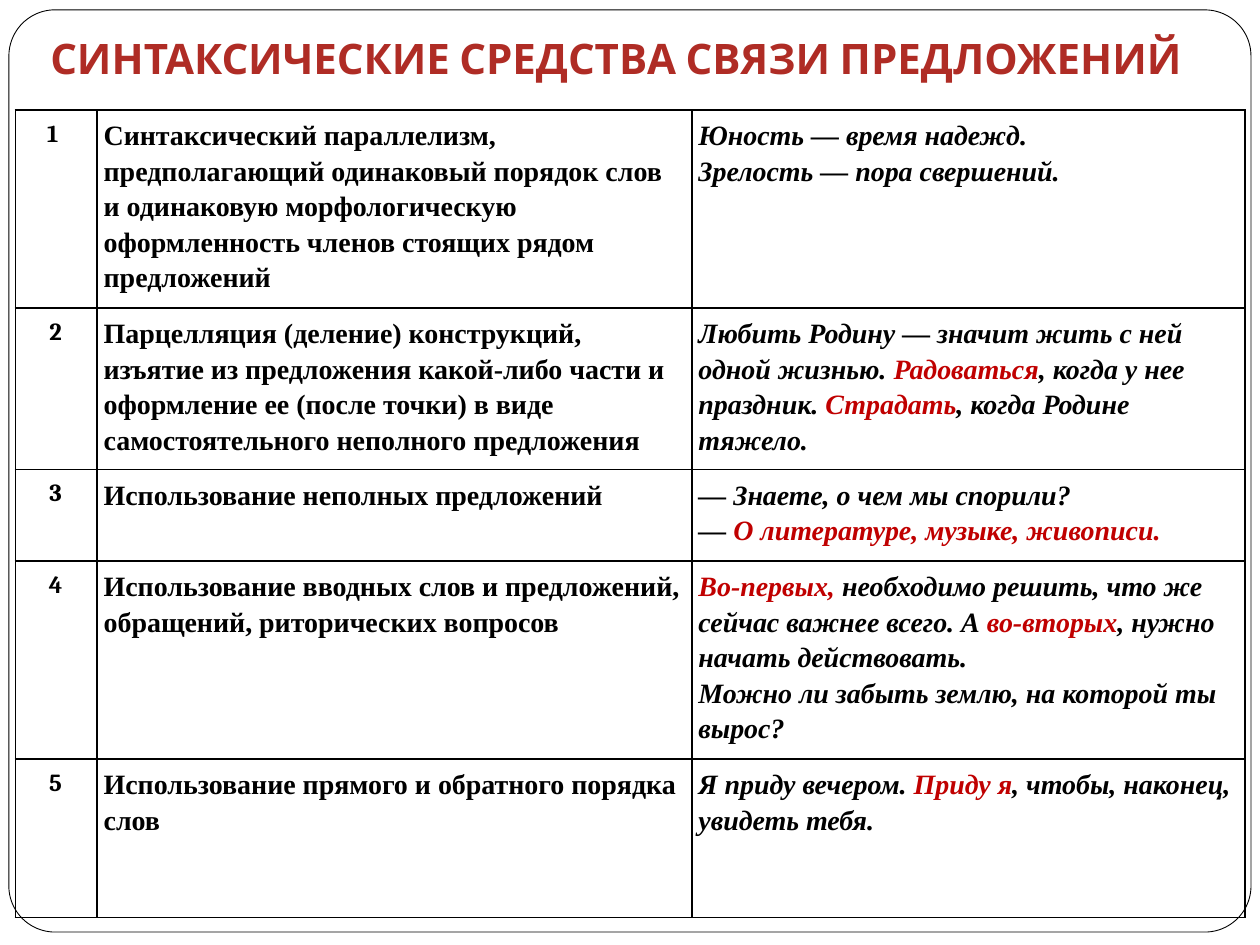
import lxml.etree
import pptx
import pptx.dml.color
import pptx.enum.shapes
import pptx.enum.text
import pptx.oxml.ns
import pptx.util

Cm = pptx.util.Cm
Pt = pptx.util.Pt
CENTER = pptx.enum.text.PP_ALIGN.CENTER
LEFT = pptx.enum.text.PP_ALIGN.LEFT

BLACK = "000000"
WHITE = "FFFFFF"
ACCENT = "C00000"
TITLE_RED = "AF2C25"

TITLE = "СИНТАКСИЧЕСКИЕ СРЕДСТВА СВЯЗИ ПРЕДЛОЖЕНИЙ"
COLUMN_WIDTHS = [1.65, 11.99, 11.15]
ROW_HEIGHTS = [3.99, 3.25, 1.85, 3.99, 3.2]
ACCENT_MARK = "*"
ROWS = [
    ("1 ",
     "Синтаксический параллелизм, предполагающий одинаковый порядок слов "
     "и одинаковую морфологическую оформленность членов стоящих рядом предложений",
     ["Юность — время надежд.", "Зрелость — пора свершений."]),
    ("2",
     "Парцелляция (деление) конструкций, изъятие из предложения какой-либо части "
     "и оформление ее (после точки) в виде самостоятельного неполного предложения",
     ["Любить Родину — значит жить с ней одной жизнью. *Радоваться*, "
      "когда у нее праздник. *Страдать*, когда Родине тяжело."]),
    ("3",
     "Использование неполных предложений",
     ["— Знаете, о чем мы спорили?", "— *О литературе, музыке, живописи.*"]),
    ("4",
     "Использование вводных слов и предложений, обращений, риторических вопросов",
     ["*Во-первых,* необходимо решить, что же сейчас важнее всего. "
      "А *во-вторых*, нужно начать действовать.",
      "Можно ли забыть землю, на которой ты вырос?"]),
    ("5",
     "Использование прямого и обратного порядка слов",
     ["Я приду вечером. *Приду я*, чтобы, наконец, увидеть тебя."]),
]


def color(value):
    return pptx.dml.color.RGBColor.from_string(value)


def add_run(paragraph, text, font_name, size, text_color, italic=False):
    run = paragraph.add_run()
    run.text = text
    run.font.name = font_name
    run.font.size = Pt(size)
    run.font.bold = True
    run.font.italic = italic
    run.font.color.rgb = color(text_color)


def add_frame(slide):
    shape = slide.shapes.add_shape(
        pptx.enum.shapes.MSO_SHAPE.ROUNDED_RECTANGLE,
        Cm(0.18), Cm(0.2), Cm(25.04), Cm(18.59))
    shape.adjustments[0] = 0.05
    shape.shadow.inherit = False
    shape.fill.solid()
    shape.fill.fore_color.rgb = color(WHITE)
    shape.line.color.rgb = color(BLACK)
    shape.line.width = Pt(0.5)


def add_title(slide):
    shape = slide.shapes.add_textbox(Cm(0.71), Cm(0.76), Cm(23.42), Cm(1.17))
    frame = shape.text_frame
    frame.word_wrap = True
    frame.vertical_anchor = pptx.enum.text.MSO_ANCHOR.BOTTOM
    frame.margin_left = frame.margin_right = frame.margin_bottom = Cm(0.25)
    frame.margin_top = Cm(0.13)
    paragraph = frame.paragraphs[0]
    paragraph.alignment = CENTER
    add_run(paragraph, TITLE, "Cabin", 24, TITLE_RED)


def set_borders(cell):
    properties = cell._tc.get_or_add_tcPr()
    qn = pptx.oxml.ns.qn
    for side in ("a:lnL", "a:lnR", "a:lnT", "a:lnB"):
        line = lxml.etree.SubElement(properties, qn(side), w=str(Pt(1)))
        fill = lxml.etree.SubElement(line, qn("a:solidFill"))
        lxml.etree.SubElement(fill, qn("a:srgbClr"), val=BLACK)


def fill_cell(cell, lines, font_name, size, alignment=LEFT, italic=False):
    set_borders(cell)
    cell.fill.background()
    cell.margin_left = cell.margin_top = Cm(0.13)
    cell.margin_right = Cm(0.16)
    cell.margin_bottom = Cm(0)
    frame = cell.text_frame
    for number, line in enumerate(lines):
        paragraph = frame.add_paragraph() if number else frame.paragraphs[0]
        paragraph.alignment = alignment
        paragraph.line_spacing = 1.14
        for index, part in enumerate(line.split(ACCENT_MARK)):
            if part:
                text_color = ACCENT if index % 2 else BLACK
                add_run(paragraph, part, font_name, size, text_color, italic)


def add_means_table(slide):
    shape = slide.shapes.add_table(
        len(ROWS), len(COLUMN_WIDTHS), Cm(0.31), Cm(2.22),
        Cm(sum(COLUMN_WIDTHS)), Cm(sum(ROW_HEIGHTS)))
    table = shape.table
    table.first_row = False
    table.horz_banding = False
    for column, width in zip(table.columns, COLUMN_WIDTHS):
        column.width = Cm(width)
    for row, height, (number, means, examples) in zip(table.rows, ROW_HEIGHTS, ROWS):
        row.height = Cm(height)
        number_cell, means_cell, example_cell = row.cells
        fill_cell(number_cell, [number], "Cambria", 14, alignment=CENTER)
        fill_cell(means_cell, [means], "Times New Roman", 16)
        fill_cell(example_cell, examples, "Times New Roman", 16, italic=True)


def main():
    presentation = pptx.Presentation()
    presentation.slide_width = Cm(25.4)
    presentation.slide_height = Cm(19.05)
    slide = presentation.slides.add_slide(presentation.slide_layouts[6])
    add_frame(slide)
    add_title(slide)
    add_means_table(slide)
    presentation.save("out.pptx")


if __name__ == "__main__":
    main()
